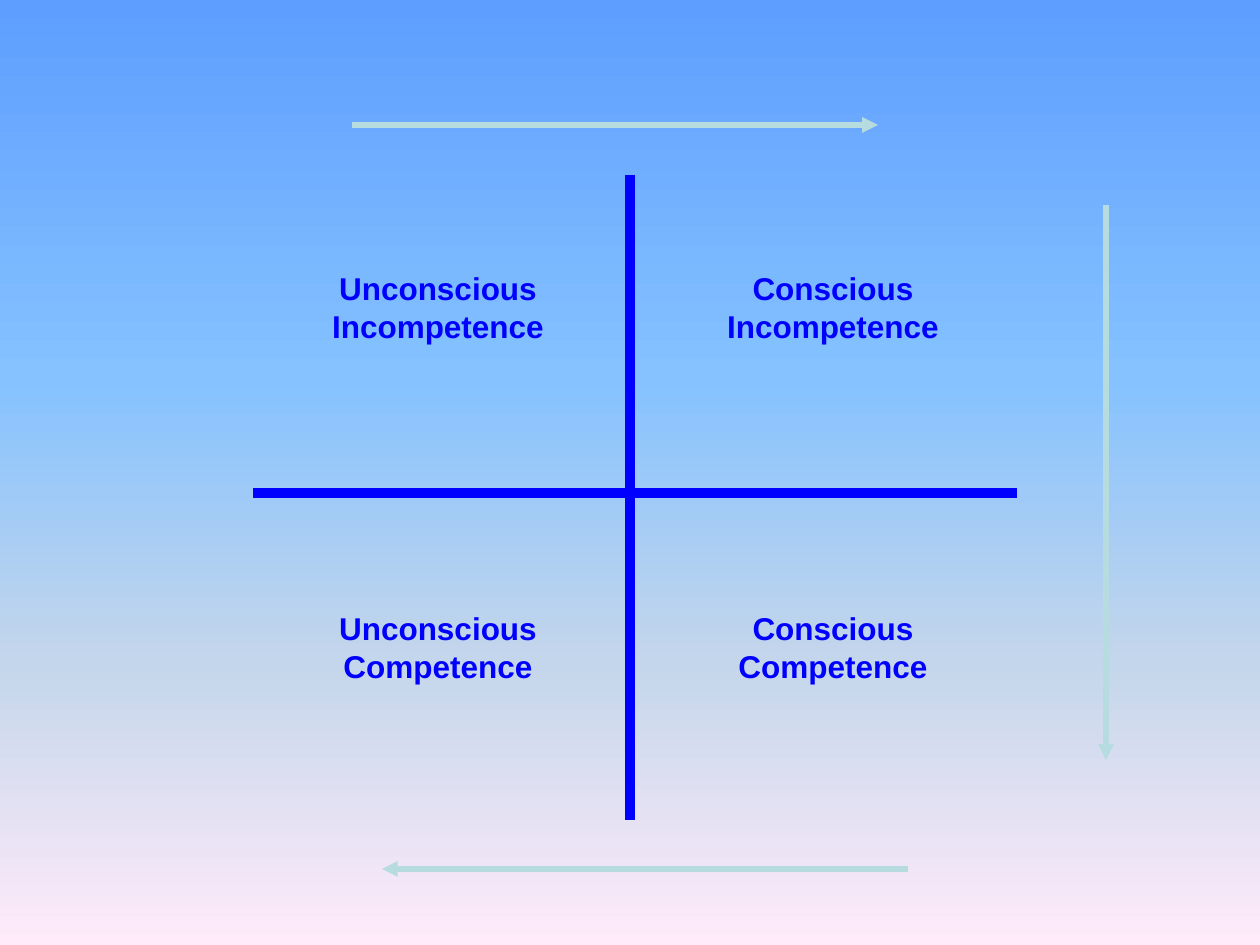
from dataclasses import dataclass

from lxml.etree import SubElement
from pptx import Presentation
from pptx.dml.color import RGBColor
from pptx.enum.shapes import MSO_CONNECTOR
from pptx.enum.text import MSO_AUTO_SIZE, PP_ALIGN
from pptx.oxml.ns import qn
from pptx.slide import Slide
from pptx.util import Emu, Pt

PX_PER_INCH = 126


def px(length: int) -> Emu:
    return Emu(round(length * 914400 / PX_PER_INCH))


@dataclass(frozen=True)
class Theme:
    font: str = "Arial"
    label_size: int = 18
    axis_color: str = "0000FF"
    axis_width: int = 6
    arrow_color: str = "B6DCDF"
    arrow_width: int = 3
    # Background stops from top to bottom: (percent, colour)
    sky: tuple = ((0, "5E9EFF"), (40, "85C2FF"), (70, "C4D6EB"), (100, "FFEBFA"))


@dataclass(frozen=True)
class Line:
    x1: int
    y1: int
    x2: int
    y2: int
    arrow: bool = False


@dataclass(frozen=True)
class Quadrant:
    column: int
    row: int
    text: str


THEME = Theme()

LINES = [
    # Axes
    Line(630, 175, 630, 820),
    Line(253, 493, 1017, 493),
    # Clockwise arrows
    Line(352, 125, 878, 125, arrow=True),
    Line(1106, 205, 1106, 760, arrow=True),
    Line(908, 869, 382, 869, arrow=True),
]

COLUMN_LEFT = (314, 709)
ROW_TOP = (263, 603)
LABEL_WIDTH, LABEL_HEIGHT = 248, 89
QUADRANTS = [
    Quadrant(0, 0, "Unconscious Incompetence"),
    Quadrant(1, 0, "Conscious Incompetence"),
    Quadrant(0, 1, "Unconscious Competence"),
    Quadrant(1, 1, "Conscious Competence"),
]


def paint_background(slide: Slide) -> None:
    fill = slide.background.fill
    fill.gradient()
    fill.gradient_angle = 270
    stops = slide.element.find(".//" + qn("a:gsLst"))
    for stop in list(stops):
        stops.remove(stop)
    for percent, color in THEME.sky:
        stop = SubElement(stops, qn("a:gs"), pos=str(percent * 1000))
        SubElement(stop, qn("a:srgbClr"), val=color)


def draw_line(slide: Slide, line: Line) -> None:
    connector = slide.shapes.add_connector(
        MSO_CONNECTOR.STRAIGHT, px(line.x1), px(line.y1), px(line.x2), px(line.y2)
    )
    color = THEME.arrow_color if line.arrow else THEME.axis_color
    connector.line.color.rgb = RGBColor.from_string(color)
    connector.line.width = Pt(THEME.arrow_width if line.arrow else THEME.axis_width)
    properties = connector.element.spPr
    if line.arrow:
        SubElement(properties.find(qn("a:ln")), qn("a:tailEnd"), type="triangle")
    SubElement(properties, qn("a:effectLst"))


def draw_label(slide: Slide, quadrant: Quadrant) -> None:
    box = slide.shapes.add_textbox(
        px(COLUMN_LEFT[quadrant.column]), px(ROW_TOP[quadrant.row]),
        px(LABEL_WIDTH), px(LABEL_HEIGHT),
    )
    frame = box.text_frame
    frame.word_wrap = True
    frame.auto_size = MSO_AUTO_SIZE.SHAPE_TO_FIT_TEXT
    paragraph = frame.paragraphs[0]
    paragraph.text = quadrant.text
    paragraph.alignment = PP_ALIGN.CENTER
    font = paragraph.font
    font.name = THEME.font
    font.size = Pt(THEME.label_size)
    font.bold = True
    font.color.rgb = RGBColor.from_string(THEME.axis_color)


def main() -> None:
    presentation = Presentation()
    presentation.slide_width = px(1260)
    presentation.slide_height = px(945)
    blank_layout = presentation.slide_layouts[6]
    slide = presentation.slides.add_slide(blank_layout)

    paint_background(slide)
    for line in LINES:
        draw_line(slide, line)
    for quadrant in QUADRANTS:
        draw_label(slide, quadrant)

    presentation.save("out.pptx")


if __name__ == "__main__":
    main()
